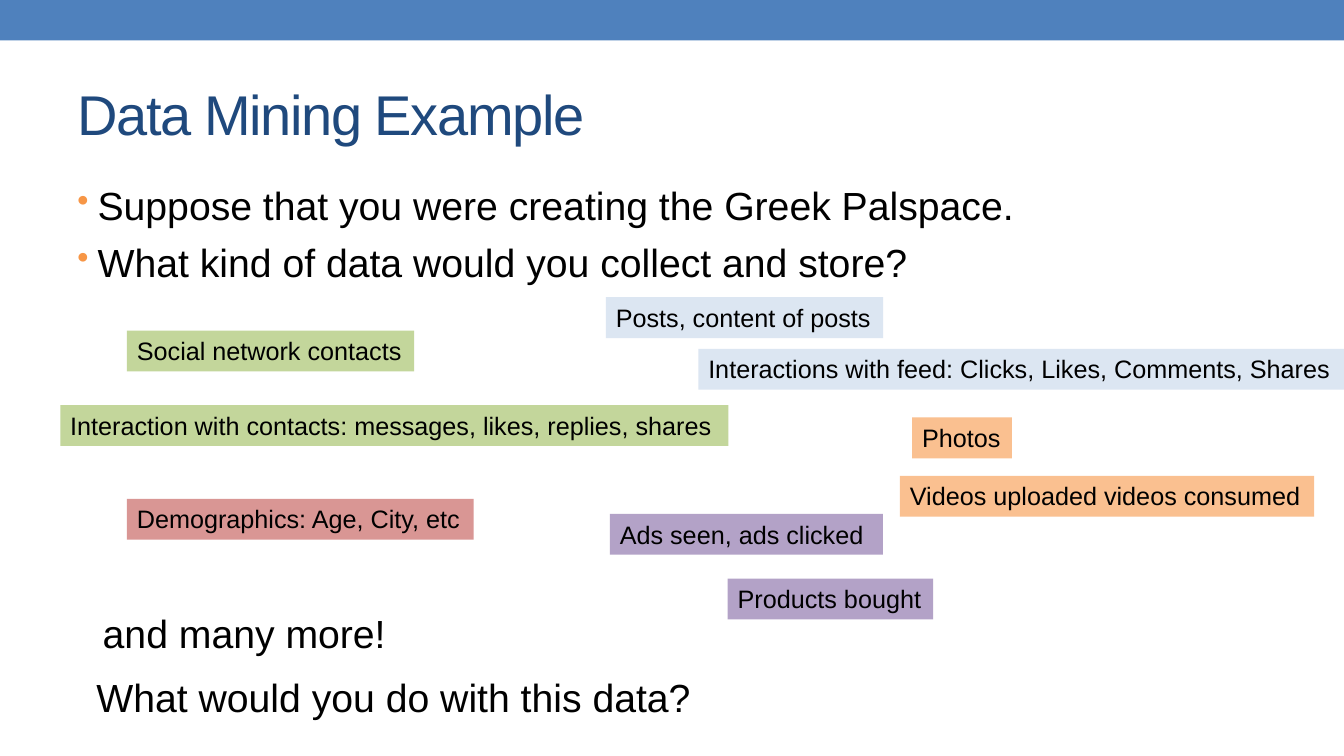
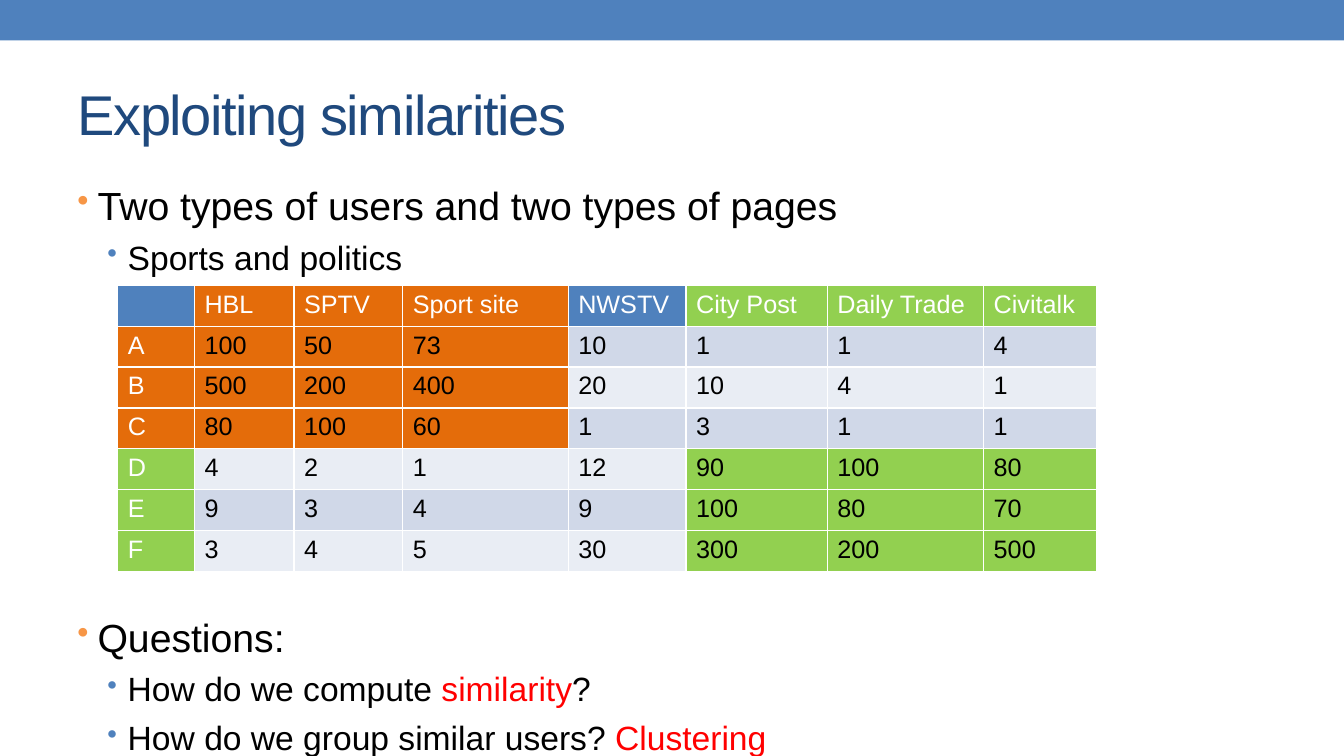
"""Build two slides on mining data from a social network."""
from dataclasses import dataclass

import lxml.etree
import pptx
import pptx.dml.color
import pptx.enum.text
import pptx.oxml.ns
import pptx.presentation
import pptx.slide
import pptx.table
import pptx.text.text
import pptx.util

Cm = pptx.util.Cm
Pt = pptx.util.Pt
qn = pptx.oxml.ns.qn


@dataclass(frozen=True)
class Theme:
    """Colours, font and type sizes shared by the slides."""
    font: str = "Arial"
    blue: str = "4F81BD"
    navy: str = "1F497D"
    bullet_orange: str = "F79646"
    black: str = "000000"
    white: str = "FFFFFF"
    red: str = "FF0000"
    green_label: str = "C3D69B"
    blue_label: str = "DCE6F2"
    orange_label: str = "FAC090"
    red_label: str = "D99694"
    purple_label: str = "B3A2C7"
    sports: str = "E46C0A"
    politics: str = "92D050"
    dark_row: str = "D0D8E8"
    light_row: str = "E9EDF4"
    title_size: int = 40
    text_size: int = 28
    subtext_size: int = 24
    label_size: int = 18


THEME = Theme()
SLIDE_WIDTH, SLIDE_HEIGHT = Cm(33.87), Cm(19.05)
TEXT_LEFT, TEXT_WIDTH = Cm(1.7), Cm(30.48)


@dataclass(frozen=True)
class Label:
    """A text box with its place in centimetres and an optional fill."""
    text: str
    left: float
    top: float
    width: float
    fill: str | None = None
    size: int = THEME.label_size
    height: float = 1.03


@dataclass(frozen=True)
class Bullet:
    """A bulleted line, with an optional highlighted part."""
    text: str
    level: int = 0
    highlight: str = ""


@dataclass(frozen=True)
class Column:
    """A page in the visits table, its group colour and its visits by user."""
    heading: str
    width: float
    group: str
    visits: tuple[int, ...]


LABELS = (
    Label("Social network contacts", 3.2, 8.33, 7.24, THEME.green_label),
    Label("Interaction with contacts: messages, likes, replies, shares",
          1.52, 10.21, 16.84, THEME.green_label),
    Label("Posts, content of posts", 15.27, 7.49, 6.99, THEME.blue_label),
    Label("Interactions with feed: Clicks, Likes, Comments, Shares",
          17.6, 8.79, 16.36, THEME.blue_label),
    Label("Photos", 22.99, 10.52, 2.51, THEME.orange_label),
    Label("Demographics: Age, City, etc", 3.2, 12.57, 8.74, THEME.red_label),
    Label("Ads seen, ads clicked", 15.37, 12.95, 6.88, THEME.purple_label),
    Label("Products bought", 18.34, 14.58, 5.18, THEME.purple_label),
    Label("Videos uploaded videos consumed", 22.68, 11.99, 10.44, THEME.orange_label),
    Label("and many more!", 2.34, 15.24, 7.75, size=THEME.text_size, height=1.45),
    Label("What would you do with this data?", 2.18, 16.84, 15.95,
          size=THEME.text_size, height=1.45),
)

USERS = {"A": THEME.sports, "B": THEME.sports, "C": THEME.sports,
         "D": THEME.politics, "E": THEME.politics, "F": THEME.politics}
USER_COLUMN_WIDTH = 1.93
COLUMNS = (
    Column("HBL", 2.51, THEME.sports, (100, 500, 80, 4, 9, 3)),
    Column("SPTV", 2.74, THEME.sports, (50, 200, 100, 2, 3, 4)),
    Column("Sport site", 4.17, THEME.sports, (73, 400, 60, 1, 4, 5)),
    Column("NWSTV", 2.97, THEME.blue, (10, 20, 1, 12, 9, 30)),
    Column("City Post", 3.56, THEME.politics, (1, 10, 3, 90, 100, 300)),
    Column("Daily Trade", 3.94, THEME.politics, (1, 4, 1, 100, 80, 200)),
    Column("Civitalk", 2.84, THEME.politics, (4, 1, 1, 80, 70, 500)),
)


def rgb(colour: str) -> pptx.dml.color.RGBColor:
    """Turn a hexadecimal colour into an RGBColor."""
    return pptx.dml.color.RGBColor.from_string(colour)


def style_font(font: pptx.text.text.Font, size: int, colour: str) -> None:
    """Apply the theme font with a size and a colour."""
    font.name = THEME.font
    font.size = Pt(size)
    font.bold = False
    font.color.rgb = rgb(colour)


def add_titled_slide(presentation: pptx.presentation.Presentation,
                     heading: str) -> pptx.slide.Slide:
    """Add a slide with the top band and a formatted title."""
    slide = presentation.slides.add_slide(presentation.slide_layouts.get_by_name("Title Only"))
    band = slide.shapes.add_shape(pptx.enum.shapes.MSO_SHAPE.RECTANGLE,
                                  0, 0, SLIDE_WIDTH, Cm(1.02))
    band.shadow.inherit = False
    band.fill.solid()
    band.fill.fore_color.rgb = rgb(THEME.blue)
    band.line.fill.background()

    title = slide.shapes.title
    title.left, title.top, title.width, title.height = TEXT_LEFT, Cm(1.47), TEXT_WIDTH, Cm(2.74)
    frame = title.text_frame
    frame.text = heading
    frame.auto_size = pptx.enum.text.MSO_AUTO_SIZE.NONE
    frame.vertical_anchor = pptx.enum.text.MSO_ANCHOR.MIDDLE
    paragraph = frame.paragraphs[0]
    paragraph.alignment = pptx.enum.text.PP_ALIGN.LEFT
    style_font(paragraph.font, THEME.title_size, THEME.navy)
    paragraph.runs[0]._r.get_or_add_rPr().set("spc", "-100")
    return slide


def add_label(slide: pptx.slide.Slide, label: Label) -> None:
    """Draw one label."""
    box = slide.shapes.add_textbox(Cm(label.left), Cm(label.top),
                                   Cm(label.width), Cm(label.height))
    if label.fill:
        box.fill.solid()
        box.fill.fore_color.rgb = rgb(label.fill)
    box.text_frame.word_wrap = True
    paragraph = box.text_frame.paragraphs[0]
    paragraph.text = label.text
    style_font(paragraph.font, label.size, THEME.black)


def set_bullet(paragraph: pptx.text.text._Paragraph, level: int) -> None:
    """Give a paragraph its bullet and hanging indent."""
    properties = paragraph._p.get_or_add_pPr()
    properties.set("marL", str(Cm(1.27 if level else 0.51)))
    properties.set("indent", str(Cm(-0.51)))
    colour = lxml.etree.SubElement(properties, qn("a:buClr"))
    lxml.etree.SubElement(colour, qn("a:srgbClr"),
                          val=THEME.blue if level else THEME.bullet_orange)
    lxml.etree.SubElement(properties, qn("a:buSzPct"), val="85000")
    lxml.etree.SubElement(properties, qn("a:buChar"), char="•")


def add_bullets(slide: pptx.slide.Slide, top: float, height: float,
                bullets: tuple[Bullet, ...]) -> None:
    """Draw a block of bulleted lines."""
    frame = slide.shapes.add_textbox(TEXT_LEFT, Cm(top), TEXT_WIDTH, Cm(height)).text_frame
    frame.word_wrap = True
    for index, bullet in enumerate(bullets):
        paragraph = frame.add_paragraph() if index else frame.paragraphs[0]
        size = THEME.subtext_size if bullet.level else THEME.text_size
        set_bullet(paragraph, bullet.level)
        paragraph.level = bullet.level
        if index:
            paragraph.space_before = Pt(size / 4)
        style_font(paragraph.font, size, THEME.black)
        parts = bullet.text.partition(bullet.highlight) if bullet.highlight else (bullet.text,)
        for part in filter(None, parts):
            run = paragraph.add_run()
            run.text = part
            if part == bullet.highlight:
                run.font.color.rgb = rgb(THEME.red)


def fill_cell(cell: pptx.table._Cell, text: str, fill: str, colour: str) -> None:
    """Write a table cell with thin white borders and a fill."""
    properties = cell._tc.get_or_add_tcPr()
    for side in ("L", "R", "T", "B"):
        border = lxml.etree.SubElement(properties, qn(f"a:ln{side}"), w=str(Pt(1)))
        solid = lxml.etree.SubElement(border, qn("a:solidFill"))
        lxml.etree.SubElement(solid, qn("a:srgbClr"), val=THEME.white)
    cell.fill.solid()
    cell.fill.fore_color.rgb = rgb(fill)
    cell.text = text
    style_font(cell.text_frame.paragraphs[0].font, THEME.label_size, colour)


def add_visits_table(slide: pptx.slide.Slide) -> None:
    """Draw the visits of each user, coloured where user and page groups match."""
    widths = [Cm(width) for width in (USER_COLUMN_WIDTH, *(page.width for page in COLUMNS))]
    row_height = Cm(1.03)
    row_count = len(USERS) + 1
    table = slide.shapes.add_table(row_count, len(widths), Cm(2.97), Cm(7.19),
                                   sum(widths), row_height * row_count).table
    table.first_row = table.horz_banding = False
    for column, width in zip(table.columns, widths):
        column.width = width
    for row in table.rows:
        row.height = row_height

    fill_cell(table.cell(0, 0), "", THEME.blue, THEME.white)
    for row_index, (user, group) in enumerate(USERS.items(), start=1):
        fill_cell(table.cell(row_index, 0), user, group, THEME.white)
    for column_index, page in enumerate(COLUMNS, start=1):
        fill_cell(table.cell(0, column_index), page.heading, page.group, THEME.white)
        for row_index, (group, visits) in enumerate(zip(USERS.values(), page.visits), start=1):
            row_fill = THEME.dark_row if row_index % 2 else THEME.light_row
            fill = group if group == page.group else row_fill
            fill_cell(table.cell(row_index, column_index), str(visits), fill, THEME.black)


def build_example(presentation: pptx.presentation.Presentation) -> None:
    """Build the slide on the data a social network collects."""
    slide = add_titled_slide(presentation, "Data Mining Example")
    add_bullets(slide, 4.45, 3.6, (
        Bullet("Suppose that you were creating the Greek Palspace."),
        Bullet("What kind of data would you collect and store?"),
    ))
    for label in LABELS:
        add_label(slide, label)


def build_similarities(presentation: pptx.presentation.Presentation) -> None:
    """Build the slide on similar users and pages."""
    slide = add_titled_slide(presentation, "Exploiting similarities")
    add_bullets(slide, 4.45, 2.7, (
        Bullet("Two types of users and two types of pages"),
        Bullet("Sports and politics", 1),
    ))
    add_visits_table(slide)
    add_bullets(slide, 15.32, 3.6, (
        Bullet("Questions:"),
        Bullet("How do we compute similarity?", 1, "similarity"),
        Bullet("How do we group similar users? Clustering", 1, "Clustering"),
    ))


def main() -> None:
    """Build and save the presentation."""
    presentation = pptx.Presentation()
    presentation.slide_width, presentation.slide_height = SLIDE_WIDTH, SLIDE_HEIGHT
    build_example(presentation)
    build_similarities(presentation)
    presentation.save("out.pptx")


if __name__ == "__main__":
    main()
